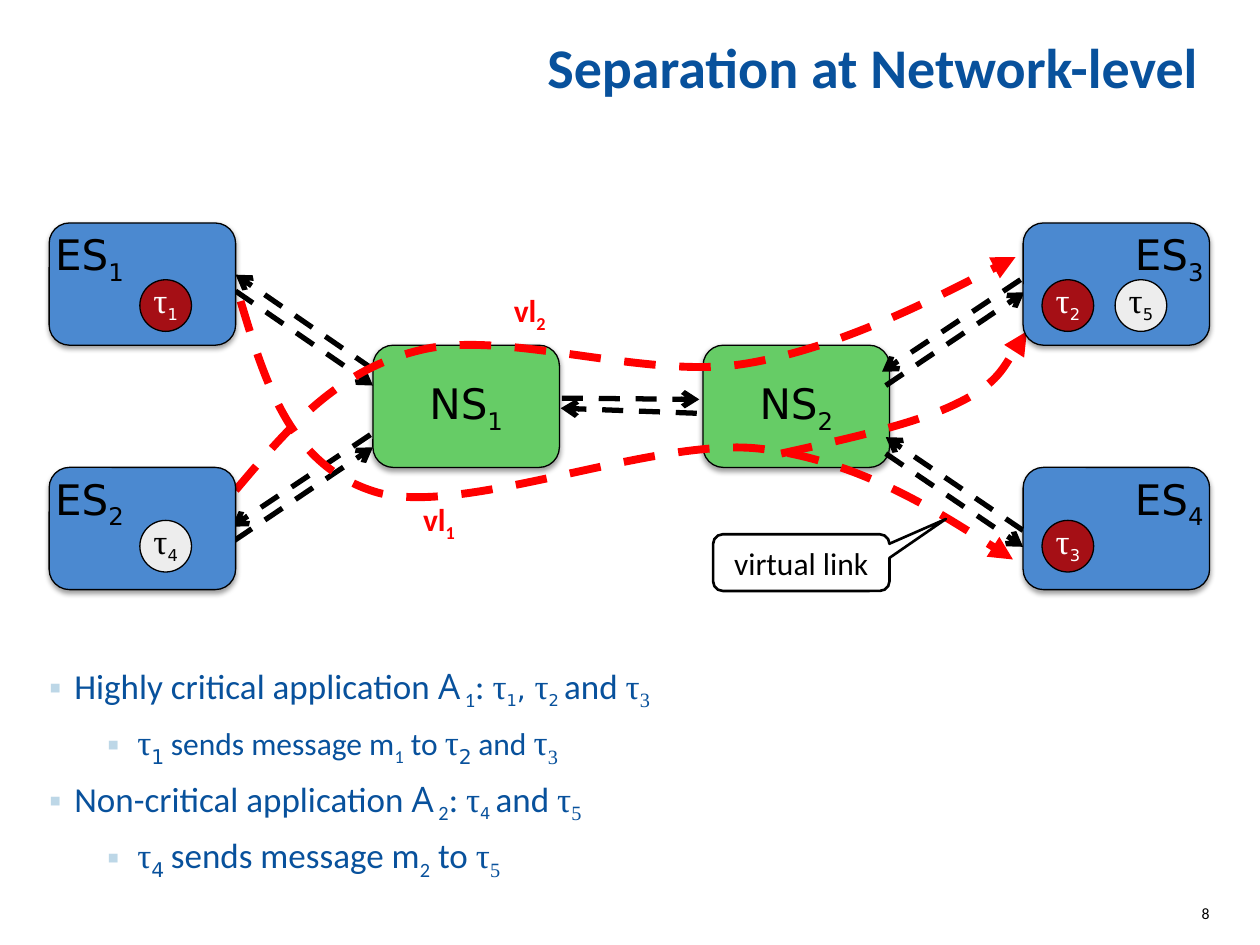
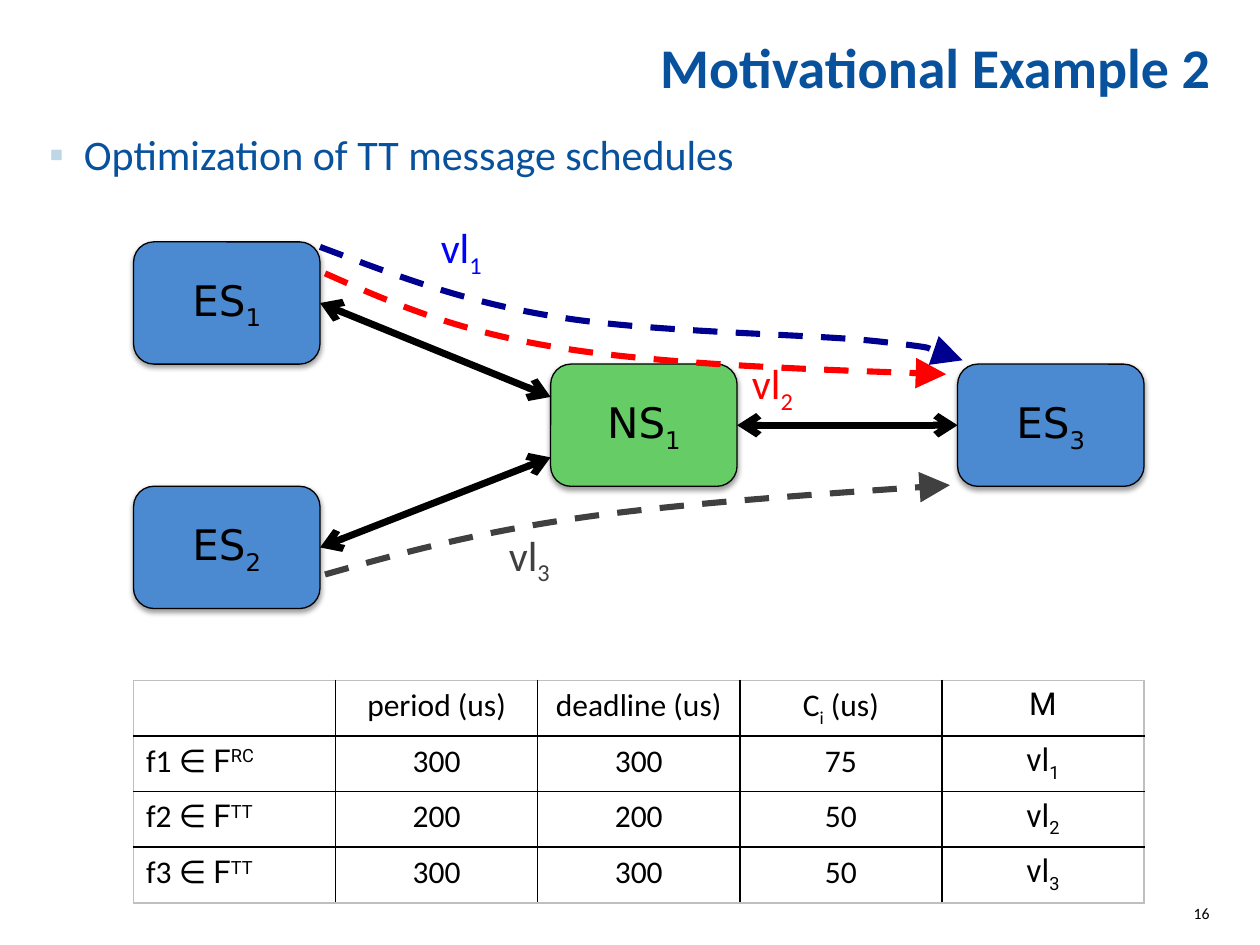
"""Build two slides on message separation in a switched network."""
import dataclasses
import typing

import lxml.etree
import pptx
import pptx.dml.color
import pptx.enum.dml
import pptx.enum.shapes
import pptx.enum.text
import pptx.util

WIDE, HIGH = pptx.util.Inches(10), pptx.util.Inches(7.5)
COL, ROW = WIDE / 100, HIGH / 75
BOX_W, BOX_H, DOT = 14.8, 9.7, 4.1
HUES = {
    "ink": "000000", "paper": "FFFFFF", "title": "08519C", "mark": "BDD7E7",
    "end": "4B89D0", "switch": "66CC66", "crit": "A50F15", "calm": "EDEDED",
    "red": "FF0000", "navy": "000090", "blue": "0000FF", "gray": "404040",
    "rim": "BFBFBF",
}
MAIN, MONO, GREEK = "Calibri", "DejaVu Sans", "Times New Roman"
KIND = pptx.enum.shapes.MSO_SHAPE
SIDE = pptx.enum.text.PP_ALIGN
HOLD = pptx.enum.text.MSO_ANCHOR
Pair = tuple[float, float]


class Style(typing.NamedTuple):
    """Run settings that differ from the paragraph."""
    face: str = ""
    size: int = 0
    base: int = 0


STYLES = {
    "": Style(), "sub": Style(base=-25), "open": Style("Open Sans"),
    "greek": Style(GREEK, 20), "gsub": Style(GREEK, 20, -25),
    "deja": Style(MONO, 20, -25), "tiny": Style(MONO, 16, -25),
    "flat": Style(MONO, 16), "robo": Style("Roboto"),
    "rsub": Style("Roboto", 0, -25), "rsup": Style("Roboto", 0, 30),
}


@dataclasses.dataclass
class Look:
    """Paragraph settings."""
    size: int
    hue: str = "ink"
    face: str = MAIN
    side: typing.Any = SIDE.LEFT
    bold: bool = False


@dataclasses.dataclass
class Node:
    """A network box with its label and tasks."""
    name: str
    x: float
    y: float
    hue: str = "end"
    side: typing.Any = SIDE.CENTER
    hold: typing.Any = HOLD.MIDDLE
    tasks: tuple = ()


@dataclasses.dataclass
class Task:
    """A round task mark."""
    num: int
    x: float
    y: float
    crit: bool = True


@dataclasses.dataclass
class Link:
    """A straight arrow, joined to nodes where they are named."""
    start: Pair
    end: Pair
    tail: str = ""
    head: str = ""


@dataclasses.dataclass
class Curve:
    """A dashed Bezier arrow: an anchor, then three points per arc."""
    hue: str
    points: list[Pair]


@dataclasses.dataclass
class Tag:
    """A short label beside a curve."""
    num: int
    x: float
    y: float
    hue: str


def tint(name: str) -> pptx.dml.color.RGBColor:
    """Look up a colour."""
    return pptx.dml.color.RGBColor.from_string(HUES[name])


def area(x: float, y: float, w: float, h: float) -> tuple[int, ...]:
    """Turn grid columns and rows into lengths."""
    return round(x * COL), round(y * ROW), round(w * COL), round(h * ROW)


def sub(top: typing.Any, tag: str, **attrs: str) -> typing.Any:
    """Add a drawing element."""
    return lxml.etree.SubElement(top, pptx.oxml.ns.qn("a:" + tag), attrs)


def write(para: typing.Any, text: str, look: Look) -> None:
    """Fill a paragraph from pieces written as style~text."""
    para.alignment = look.side
    font = para.font
    font.size, font.name, font.bold = pptx.util.Pt(look.size), look.face, look.bold
    font.color.rgb = tint(look.hue)
    for piece in text.split("|"):
        key, _, words = piece.rpartition("~")
        run, style = para.add_run(), STYLES[key]
        run.text = words
        if style.face:
            run.font.name = style.face
        if style.size:
            run.font.size = pptx.util.Pt(style.size)
        if style.base:
            run._r.get_or_add_rPr().set("baseline", str(style.base * 1000))


def setup(frame: typing.Any, hold: typing.Any = HOLD.TOP) -> None:
    """Strip the margins of a text frame."""
    frame.word_wrap, frame.vertical_anchor = True, hold
    frame.auto_size = pptx.enum.text.MSO_AUTO_SIZE.NONE
    frame.margin_left = frame.margin_right = 0
    frame.margin_top = frame.margin_bottom = 0


def place(shape: typing.Any, box: tuple[int, ...]) -> None:
    """Move and size a placeholder."""
    shape.left, shape.top, shape.width, shape.height = box


def stroke(line: typing.Any, hue: str, width: float, dash: bool = False) -> None:
    """Set a line's colour, width and dash."""
    line.color.rgb, line.width = tint(hue), pptx.util.Pt(width)
    if dash:
        line.dash_style = pptx.enum.dml.MSO_LINE.DASH


def solid(slide: typing.Any, kind: typing.Any, box: tuple[int, ...], fill: str,
          text: str, look: Look, hold: typing.Any) -> typing.Any:
    """Draw a filled, thinly outlined shape with text."""
    shape = slide.shapes.add_shape(kind, *box)
    shape.shadow.inherit = False
    shape.fill.solid()
    shape.fill.fore_color.rgb = tint(fill)
    stroke(shape.line, "ink", 0.75)
    setup(shape.text_frame, hold)
    write(shape.text_frame.paragraphs[0], text, look)
    return shape


def draw_node(slide: typing.Any, node: Node) -> typing.Any:
    """Draw a box, its soft shadow and its tasks."""
    kind, num = node.name[:2], node.name[2:]
    shape = solid(slide, KIND.ROUNDED_RECTANGLE, area(node.x, node.y, BOX_W, BOX_H),
                  node.hue, f"{kind}|sub~{num}", Look(24, "ink", MONO, node.side), node.hold)
    glow = shape._element.spPr.find(pptx.oxml.ns.qn("a:effectLst"))
    cast = sub(glow, "outerShdw", blurRad="39370", dist="20320", dir="5400000", rotWithShape="0")
    sub(sub(cast, "srgbClr", val=HUES["ink"]), "alpha", val="38000")
    for task in node.tasks:
        fill, hue = ("crit", "paper") if task.crit else ("calm", "ink")
        solid(slide, KIND.OVAL, area(task.x, task.y, DOT, DOT), fill,
              f"greek~τ|tiny~{task.num}", Look(20, hue, GREEK, SIDE.CENTER), HOLD.BOTTOM)
    return shape


def draw_link(slide: typing.Any, link: Link, width: float, dash: bool,
              nodes: dict[str, typing.Any]) -> None:
    """Draw an arrow, with two heads when it is solid."""
    ends = area(*link.start, *link.end)
    line = slide.shapes.add_connector(pptx.enum.shapes.MSO_CONNECTOR.STRAIGHT, *ends)
    if link.tail:
        line.begin_connect(nodes[link.tail], 3)
    if link.head:
        line.end_connect(nodes[link.head], 1)
    stroke(line.line, "ink", width, dash)
    pen = line.line._get_or_add_ln()
    if not dash:
        sub(pen, "headEnd", type="arrow")
    sub(pen, "tailEnd", type="arrow")
    sub(line._element.spPr, "effectLst")


def draw_curve(slide: typing.Any, curve: Curve, width: float, head: str) -> None:
    """Draw a dashed curve that ends in a triangle."""
    first, *rest = [(round(x * COL), round(y * ROW)) for x, y in curve.points]
    pen = slide.shapes.build_freeform(*first)
    pen.add_line_segments(rest, close=False)
    shape = pen.convert_to_shape()
    shape.shadow.inherit = False
    shape.fill.background()
    stroke(shape.line, curve.hue, width, True)
    sub(shape.line._get_or_add_ln(), "tailEnd", type="triangle", w=head, len=head)
    track = next(shape._element.iter(pptx.oxml.ns.qn("a:path")))
    steps = track.findall(pptx.oxml.ns.qn("a:lnTo"))
    for i in range(0, len(steps), 3):
        arc = sub(track, "cubicBezTo")
        for step in steps[i:i + 3]:
            arc.append(step[0])
            track.remove(step)


def draw_tag(slide: typing.Any, tag: Tag, w: float, h: float, size: int, bold: bool) -> None:
    """Label a virtual link."""
    frame = slide.shapes.add_textbox(*area(tag.x, tag.y, w, h)).text_frame
    frame.word_wrap = bold
    write(frame.paragraphs[0], f"vl|sub~{tag.num}", Look(size, tag.hue, bold=bold))


def start(deck: typing.Any, title: str, num: int) -> typing.Any:
    """Add a slide with its title and number."""
    slide = deck.slides.add_slide(deck.slide_layouts[1])
    head = slide.shapes.title
    place(head, area(3.9, 0, 92.2, 7.9))
    setup(head.text_frame, HOLD.BOTTOM)
    para = head.text_frame.paragraphs[0]
    para.line_spacing = 0.8
    write(para, title, Look(32, "title", side=SIDE.RIGHT, bold=True))
    foot = slide.shapes.add_textbox(*area(92.7, 71.7, 3.3, 3.3)).text_frame
    setup(foot)
    write(foot.paragraphs[0], str(num), Look(9, side=SIDE.RIGHT))
    return slide


def draw_list(slide: typing.Any, box: tuple[int, ...], items: list[tuple[int, int, str]]) -> None:
    """Fill the body with bullets given as level, size and text."""
    body = slide.placeholders[1]
    place(body, box)
    frame = body.text_frame
    setup(frame)
    for i, (level, size, text) in enumerate(items):
        para = frame.add_paragraph() if i else frame.paragraphs[0]
        props = para._p.get_or_add_pPr()
        props.set("marL", str(round((2 + 5 * level) * COL)))
        props.set("indent", str(round(-2.4 * COL)))
        sub(sub(props, "buClr"), "srgbClr", val=HUES["mark"])
        sub(props, "buChar", char="▪")
        para.level, para.space_before = level, pptx.util.Pt(5)
        write(para, text, Look(size, "title"))


def draw_table(slide: typing.Any, box: tuple[int, ...], rows: list[list[str]]) -> None:
    """Draw the message table with a light rim."""
    tall, wide = len(rows), len(rows[0])
    table = slide.shapes.add_table(tall, wide, *box).table
    table.first_row = table.horz_banding = False
    for r, row in enumerate(rows):
        for c, text in enumerate(row):
            cell = table.cell(r, c)
            props = cell._tc.get_or_add_tcPr()
            rims = {"lnL": c == 0, "lnR": c == wide - 1, "lnT": r == 0, "lnB": r == tall - 1}
            for edge, outer in rims.items():
                fill = sub(sub(props, edge, w="12700"), "solidFill")
                sub(fill, "srgbClr", val=HUES["rim" if outer else "ink"])
            cell.fill.background()
            if text:
                side = SIDE.CENTER if c or not r else SIDE.LEFT
                write(cell.text_frame.paragraphs[0], text, Look(18, side=side))


def split_slide(deck: typing.Any) -> None:
    """Build the slide on network-level separation."""
    slide = start(deck, "Separation at Network-level ", 8)
    for node in (Node("NS1", 29.6, 27.4, "switch"), Node("NS2", 55.8, 27.4, "switch")):
        draw_node(slide, node)
    for ends in [
        ((18.7, 23.1), (29.6, 30.6)), ((29.6, 29.3), (18.7, 21.8)),
        ((18.6, 42.9), (29.6, 35.5)), ((29.4, 34.5), (18.4, 41.8)),
        ((70.3, 36), (81.2, 43.4)), ((81.2, 42.1), (70.3, 34.7)),
        ((70.3, 30.6), (81.3, 23.2)), ((81, 22.2), (70, 29.5)),
        ((44.6, 31.6), (55.5, 31.7)), ((55.3, 32.8), (44.5, 32.4)),
    ]:
        draw_link(slide, Link(*ends), 3, True, {})
    for points in [
        [(18.7, 38.9), (22.7, 34.2), (26.6, 29.4), (33.3, 27.8), (40, 26.1),
         (51, 30.1), (58.9, 28.9), (66.8, 27.7), (80.6, 20.4), (80.6, 20.4)],
        [(62, 36), (67.4, 34.8), (72.8, 33.6), (76, 32), (79.3, 30.4),
         (81.5, 26.3), (81.5, 26.3)],
        [(19.1, 23.9), (21.1, 30.5), (23.1, 37.1), (30, 39.1), (36.9, 41),
         (51.8, 34.7), (60.2, 35.6), (68.6, 36.5), (80.4, 44.4), (80.4, 44.4)],
    ]:
        draw_curve(slide, Curve("red", points), 4.5, "med")
    for tag in (Tag(2, 39.8, 22.6, "red"), Tag(1, 32.6, 39.2, "red")):
        draw_tag(slide, tag, 5.3, 4, 18, True)
    for name, x, y, side, tasks in [
        ("ES1", 3.9, 17.7, SIDE.LEFT, (Task(1, 11.1, 22.2),)),
        ("ES2", 3.9, 37.1, SIDE.LEFT, (Task(4, 11.1, 41.3, False),)),
        ("ES3", 81.2, 17.7, SIDE.RIGHT, (Task(2, 82.7, 22.2), Task(5, 88.5, 22.2, False))),
        ("ES4", 81.2, 37.1, SIDE.RIGHT, (Task(3, 82.7, 41.3),)),
    ]:
        draw_node(slide, Node(name, x, y, "end", side, HOLD.TOP, tasks))
    draw_list(slide, area(3.9, 52.7, 66.7, 7), [
        (0, 20, "Highly critical application |open~A|sub~ 1|: |greek~τ|tiny~1|flat~, "
                "|greek~τ|tiny~2 |and |greek~τ|gsub~3"),
        (1, 18, "greek~τ|deja~1 |sends message m|sub~1| to |greek~τ|deja~2 |and |greek~τ|gsub~3"),
        (0, 20, "Non-critical application |open~A|sub~ 2|: |greek~τ|tiny~4 |and |greek~τ|gsub~5"),
        (1, 20, "greek~τ|deja~4 |sends message m|sub~2| to |greek~τ|gsub~5"),
    ])
    note = solid(slide, KIND.ROUNDED_RECTANGULAR_CALLOUT, area(56.6, 42.4, 14, 4.5), "paper",
                 "virtual link", Look(18, side=SIDE.CENTER), HOLD.MIDDLE)
    note.fill.background()
    note.line.width = pptx.util.Pt(1.5)
    for i, value in enumerate((0.82, -0.77, 0.17)):
        note.adjustments[i] = value


def plan_slide(deck: typing.Any) -> None:
    """Build the slide on message schedules."""
    slide = start(deck, "Motivational Example 2", 16)
    draw_list(slide, area(3.9, 10.2, 92.1, 17.6),
              [(0, 24, " Optimization of TT message schedules")])
    nodes = {node.name: draw_node(slide, node) for node in (
        Node("ES1", 10.6, 19.2), Node("ES2", 10.6, 38.6),
        Node("NS1", 43.7, 28.9, "switch"), Node("ES3", 76, 28.9))}
    for link in (Link((25.4, 24.1), (43.7, 31.5), "ES1"),
                 Link((25.4, 43.4), (43.7, 36.3), "ES2"),
                 Link((58.5, 33.8), (76, 33.8), "NS1", "ES3")):
        draw_link(slide, link, 4, False, nodes)
    for hue, points in {
        "red": [(25.8, 21.7), (31, 24), (36.2, 26.3), (44.4, 27.6),
                (52.7, 29), (75.1, 29.7), (75.1, 29.7)],
        "navy": [(25.4, 19.6), (31, 21.7), (36.5, 23.9), (43.9, 25.1), (51.3, 26.4),
                 (64.3, 26.5), (69.7, 27.1), (75.1, 27.7), (76.4, 28.6), (76.4, 28.6)],
        "gray": [(25.8, 45.6), (31.8, 43.9), (37.7, 42.3), (46, 41.1),
                 (54.2, 39.9), (75.4, 38.5), (75.4, 38.5)],
    }.items():
        draw_curve(slide, Curve(hue, points), 3.5, "lg")
    for tag in (Tag(3, 39.4, 41.5, "gray"), Tag(1, 34, 17.1, "blue"), Tag(2, 58.7, 27.9, "red")):
        draw_tag(slide, tag, 5.4, 5, 24, False)
    flows = [("RC", 300, 75), ("TT", 200, 50), ("TT", 300, 50)]
    rows = [["", "period (us)", "deadline (us)", "C|sub~i| (us)", "robo~M"]]
    rows += [[f"f{i} ∈ |robo~F|rsup~{kind}", str(time), str(time), str(cost), f"robo~vl|rsub~{i}"]
             for i, (kind, time, cost) in enumerate(flows, 1)]
    draw_table(slide, area(10.6, 54, 80.2, 17.6), rows)


def main() -> None:
    """Build and save the deck."""
    deck = pptx.Presentation()
    deck.slide_width, deck.slide_height = WIDE, HIGH
    split_slide(deck)
    plan_slide(deck)
    deck.save("out.pptx")


if __name__ == "__main__":
    main()
